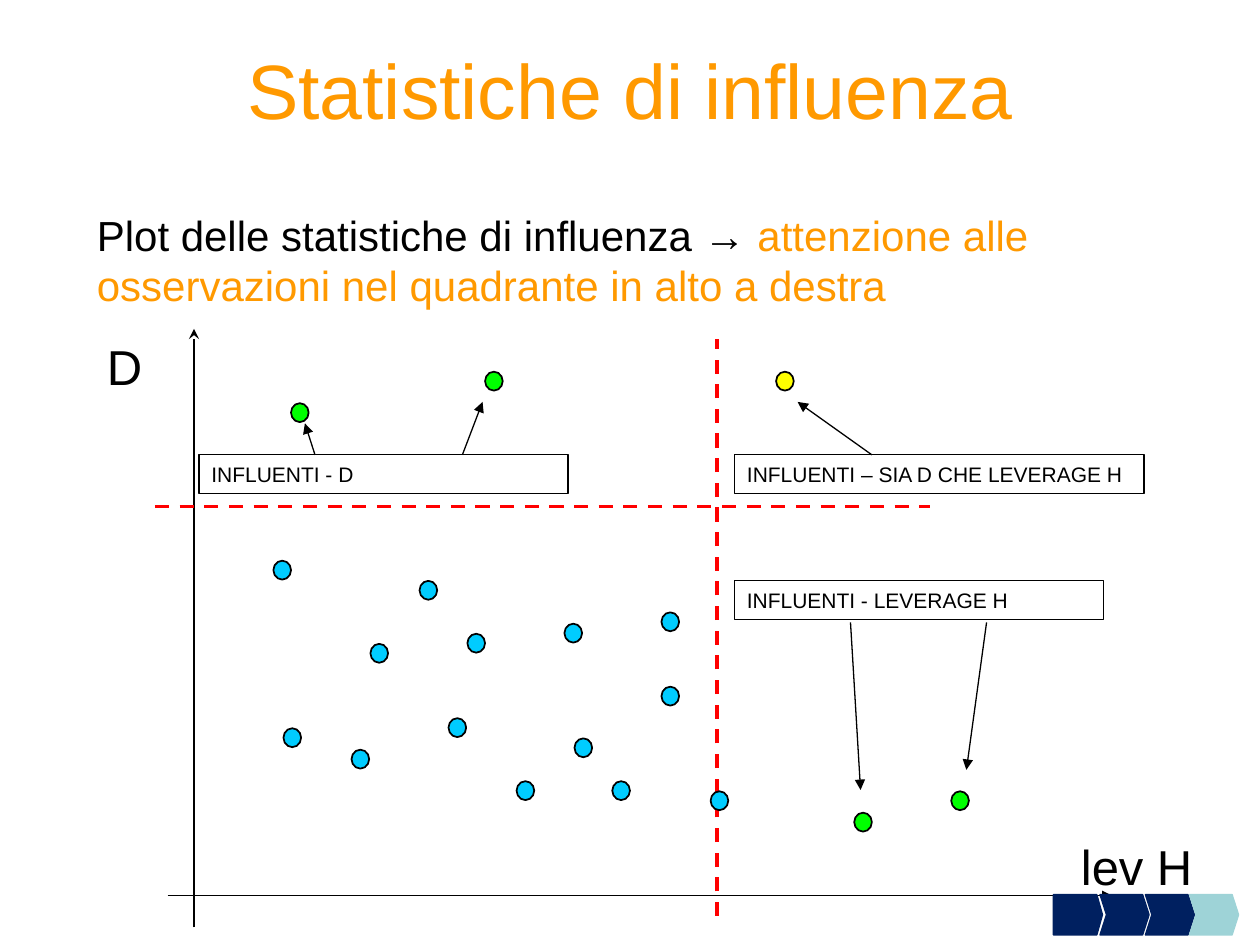
from dataclasses import dataclass
from lxml.etree import SubElement
from pptx import Presentation
from pptx.dml.color import RGBColor
from pptx.enum.dml import MSO_LINE
from pptx.enum.shapes import MSO_CONNECTOR, MSO_SHAPE
from pptx.enum.text import MSO_ANCHOR, MSO_AUTO_SIZE, PP_ALIGN
from pptx.oxml.ns import qn
from pptx.util import Inches, Pt


@dataclass(frozen=True)
class Theme:
    font: str = "Arial"
    ink: str = "000000"
    accent: str = "FF9900"
    threshold: str = "FF0000"
    ordinary: str = "00CCFF"
    one_sided: str = "00FF00"
    two_sided: str = "FFFF00"
    navy: str = "002060"
    aqua: str = "9ED3D7"
    title: int = 44
    body: int = 24
    axis: int = 28
    label: int = 12


theme = Theme()
deck = Presentation()
deck.slide_width, deck.slide_height = Inches(10), Inches(7.5)
slide = deck.slides.add_slide(deck.slide_layouts[6])
column, row = deck.slide_width / 100, deck.slide_height / 75


def add_mark(preset, left, top, width, height, fill, outline, weight):
    mark = slide.shapes.add_shape(
        preset, int(left * column), int(top * row), int(width * column), int(height * row))
    mark.shadow.inherit = False
    mark.fill.solid()
    mark.fill.fore_color.rgb = RGBColor.from_string(fill)
    mark.line.color.rgb = RGBColor.from_string(outline)
    mark.line.width = Pt(weight)
    return mark


def add_stroke(start, end, color, weight, head=None, dash=None):
    stroke = slide.shapes.add_connector(
        MSO_CONNECTOR.STRAIGHT, int(start[0] * column), int(start[1] * row),
        int(end[0] * column), int(end[1] * row))
    stroke.line.color.rgb = RGBColor.from_string(color)
    stroke.line.width = Pt(weight)
    if dash:
        stroke.line.dash_style = dash
    if head:
        SubElement(stroke.line._get_or_add_ln(), qn("a:tailEnd"), type=head)
    SubElement(stroke._element.spPr, qn("a:effectLst"))


add_stroke((15.4, 73.6), (15.4, 26.1), theme.ink, 1, "stealth")
add_stroke((13.3, 71.1), (88.3, 71.1), theme.ink, 0.75, "triangle")
for start, end in [((12.3, 40.2), (73.8, 40.2)), ((56.9, 72.7), (56.9, 26.9))]:
    add_stroke(start, end, theme.threshold, 2, dash=MSO_LINE.DASH)

observations = {
    theme.two_sided: [(61.6, 29.5)],
    theme.one_sided: [(23.1, 32), (38.5, 29.5), (67.8, 64.5), (75.5, 62.8)],
    theme.ordinary: [
        (27.9, 59.5), (29.4, 51.1), (35.6, 57), (45.6, 58.6), (52.5, 54.5),
        (33.3, 46.1), (52.5, 48.6), (37.1, 50.3), (22.5, 57.8), (41, 62),
        (44.8, 49.5), (56.4, 62.8), (21.7, 44.5), (48.6, 62),
    ],
}
for color, points in observations.items():
    for left, top in points:
        add_mark(MSO_SHAPE.OVAL, left, top, 1.4, 1.5, color, theme.ink, 1)

label_pointers = [
    ((25, 36.1), (24.2, 33.6)),
    ((36.7, 36.1), (38.3, 31.9)),
    ((69.2, 36.1), (63.3, 31.9)),
    ((67.5, 49.4), (68.3, 62.7)),
    ((78.3, 49.4), (76.7, 61.1)),
]
for start, end in label_pointers:
    add_stroke(start, end, theme.ink, 0.75, "triangle")

wrapped = {"word_wrap": True, "auto_size": MSO_AUTO_SIZE.SHAPE_TO_FIT_TEXT}
unwrapped = {**wrapped, "word_wrap": False}
centered = {"word_wrap": True, "vertical_anchor": MSO_ANCHOR.MIDDLE}
wording = [
    ((1.7, 0.8, 96.7, 12.5), theme.title, centered, PP_ALIGN.CENTER, False,
     [("Statistiche di influenza", theme.accent)]),
    ((6.7, 16.1, 87.5, 9), theme.body, wrapped, PP_ALIGN.LEFT, False,
     [("Plot delle statistiche di influenza → ", theme.ink),
      ("attenzione alle osservazioni nel quadrante in alto a destra", theme.accent)]),
    ((7.5, 26.2, 4.8, 5.7), theme.axis, unwrapped, PP_ALIGN.LEFT, False,
     [("D", theme.ink)]),
    ((84.8, 65.9, 10.9, 5.7), theme.axis, unwrapped, PP_ALIGN.LEFT, False,
     [("lev H", theme.ink)]),
    ((15.8, 36.1, 29.3, 3.1), theme.label, wrapped, PP_ALIGN.LEFT, True,
     [("INFLUENTI - D", theme.ink)]),
    ((58.3, 36.1, 32.5, 3.1), theme.label, wrapped, PP_ALIGN.LEFT, True,
     [("INFLUENTI – SIA D CHE LEVERAGE H", theme.ink)]),
    ((58.3, 46.1, 29.3, 3.1), theme.label, wrapped, PP_ALIGN.LEFT, True,
     [("INFLUENTI - LEVERAGE H", theme.ink)]),
]
for (left, top, width, height), size, frame_format, alignment, framed, runs in wording:
    caption = slide.shapes.add_textbox(
        int(left * column), int(top * row), int(width * column), int(height * row))
    for attribute, value in frame_format.items():
        setattr(caption.text_frame, attribute, value)
    if framed:
        caption.line.color.rgb = RGBColor.from_string(theme.ink)
        caption.line.width = Pt(0.75)
    sentence = caption.text_frame.paragraphs[0]
    sentence.alignment = alignment
    for text, color in runs:
        phrase = sentence.add_run()
        phrase.text = text
        for attribute, value in {"name": theme.font, "size": Pt(size)}.items():
            setattr(phrase.font, attribute, value)
        phrase.font.color.rgb = RGBColor.from_string(color)

progress_steps = [
    (MSO_SHAPE.CHEVRON, 90.9, 0.16, theme.navy),
    (MSO_SHAPE.PENTAGON, 83.6, 0.14, theme.navy),
    (MSO_SHAPE.CHEVRON, 87.3, 0.16, theme.navy),
    (MSO_SHAPE.CHEVRON, 94.4, 0.16, theme.aqua),
]
for preset, left, point, color in progress_steps:
    step = add_mark(preset, left, 71, 3.9, 3.2, color, color, 0.75)
    step.adjustments[0] = point

deck.save("out.pptx")
